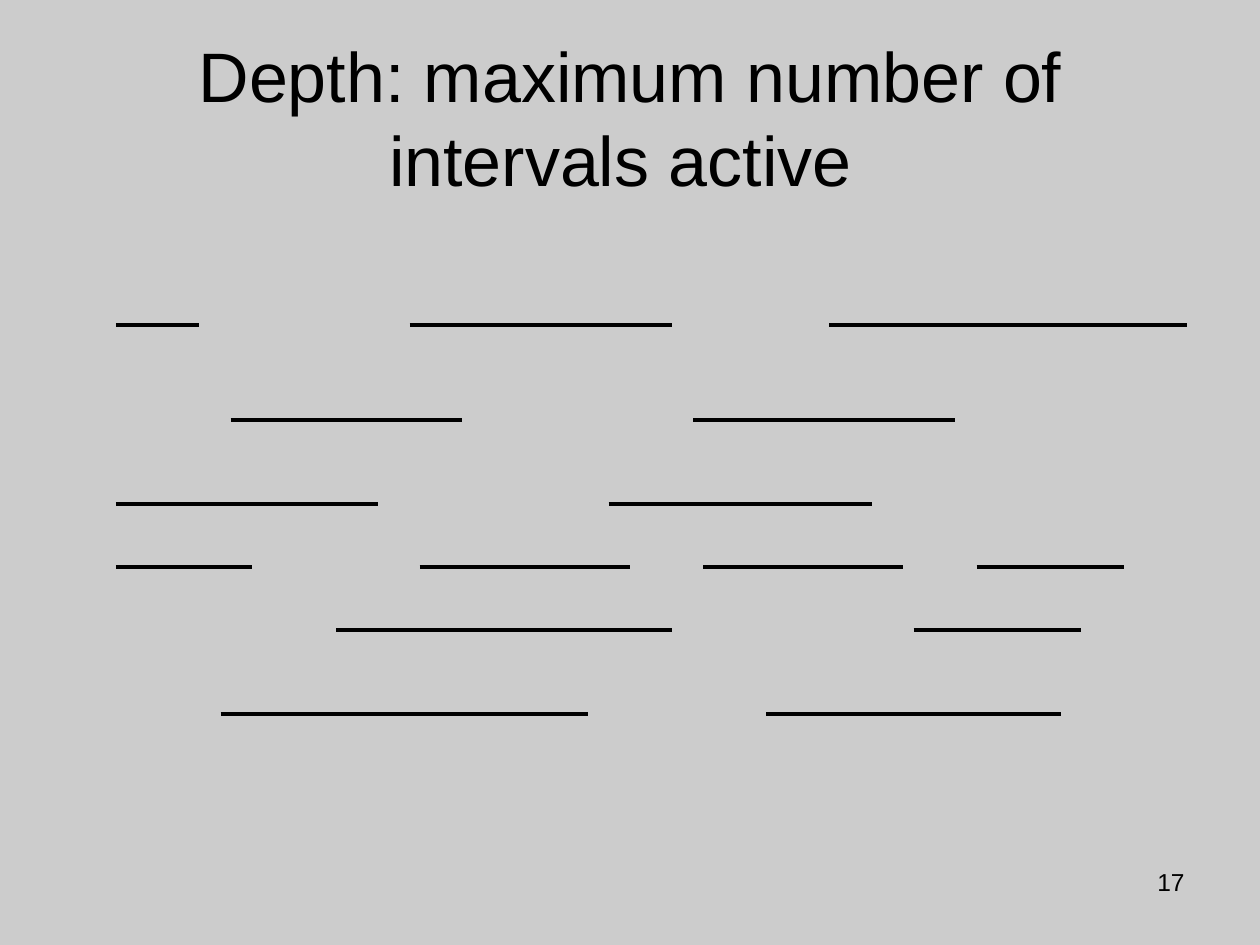
import pptx
import pptx.dml.color
import pptx.enum.shapes
import pptx.enum.text
import pptx.oxml.ns
import pptx.util
from lxml import etree
from pptx.util import Inches

BLACK = pptx.dml.color.RGBColor(0x00, 0x00, 0x00)
GRAY = pptx.dml.color.RGBColor(0xCC, 0xCC, 0xCC)
ALIGN = pptx.enum.text.PP_ALIGN
ANCHOR = pptx.enum.text.MSO_ANCHOR

# Height of each row, with the start and end of its intervals, in inches
INTERVAL_ROWS = {
    2.58: [(0.92, 1.58), (3.25, 5.33), (6.58, 9.42)],
    3.33: [(1.83, 3.67), (5.5, 7.58)],
    4: [(0.92, 3), (4.83, 6.92)],
    4.5: [(0.92, 2), (3.33, 5), (5.58, 7.17), (7.75, 8.92)],
    5: [(2.67, 5.33), (7.25, 8.58)],
    5.67: [(1.75, 4.67), (6.08, 8.42)],
}


def add_text(page, text, left, top, width, height, size, align, anchor):
    box = page.shapes.add_textbox(
        Inches(left), Inches(top), Inches(width), Inches(height))
    frame = box.text_frame
    frame.word_wrap = True
    frame.vertical_anchor = anchor
    para = frame.paragraphs[0]
    para.text = text
    para.alignment = align
    para.font.name = "Arial"
    para.font.size = pptx.util.Pt(size)
    para.font.color.rgb = BLACK


def add_interval(page, start, end, height):
    line = page.shapes.add_connector(
        pptx.enum.shapes.MSO_CONNECTOR.STRAIGHT,
        Inches(start), Inches(height), Inches(end), Inches(height))
    line.line.color.rgb = BLACK
    line.line.width = pptx.util.Pt(2.25)
    # An empty effect list removes the shadow
    etree.SubElement(line._element.spPr, pptx.oxml.ns.qn("a:effectLst"))


def main():
    deck = pptx.Presentation()
    deck.slide_width, deck.slide_height = Inches(10), Inches(7.5)
    page = deck.slides.add_slide(deck.slide_layouts[6])
    page.background.fill.solid()
    page.background.fill.fore_color.rgb = GRAY

    # Title
    add_text(page, "Depth: maximum number of intervals active ",
             0.5, 0.3, 9, 1.25, 40, ALIGN.CENTER, ANCHOR.MIDDLE)

    # Intervals
    for height, intervals in INTERVAL_ROWS.items():
        for start, end in intervals:
            add_interval(page, start, end, height)

    # Page number
    add_text(page, "17", 7.17, 6.83, 2.33, 0.52, 14, ALIGN.RIGHT, ANCHOR.TOP)

    deck.save("out.pptx")


if __name__ == "__main__":
    main()
